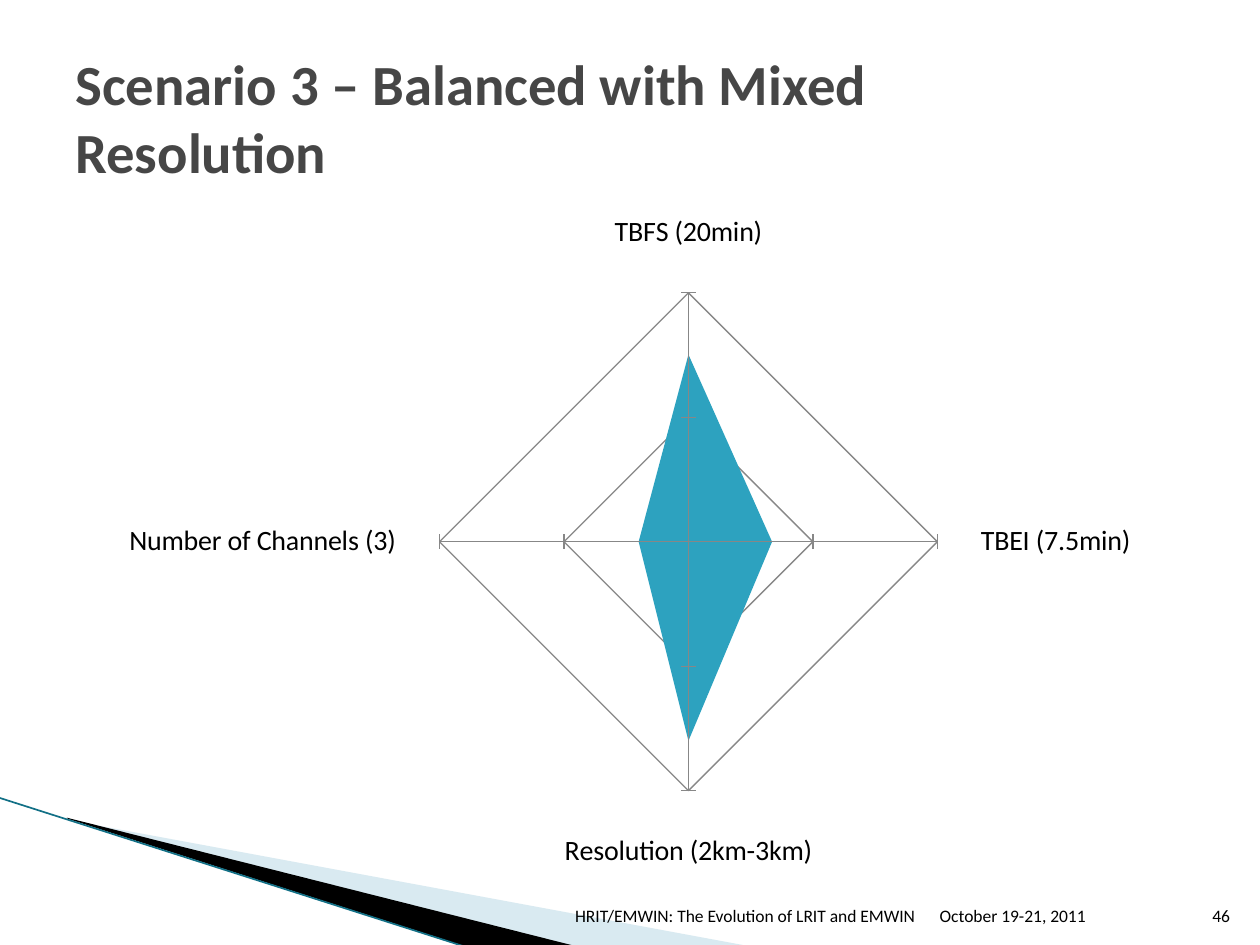
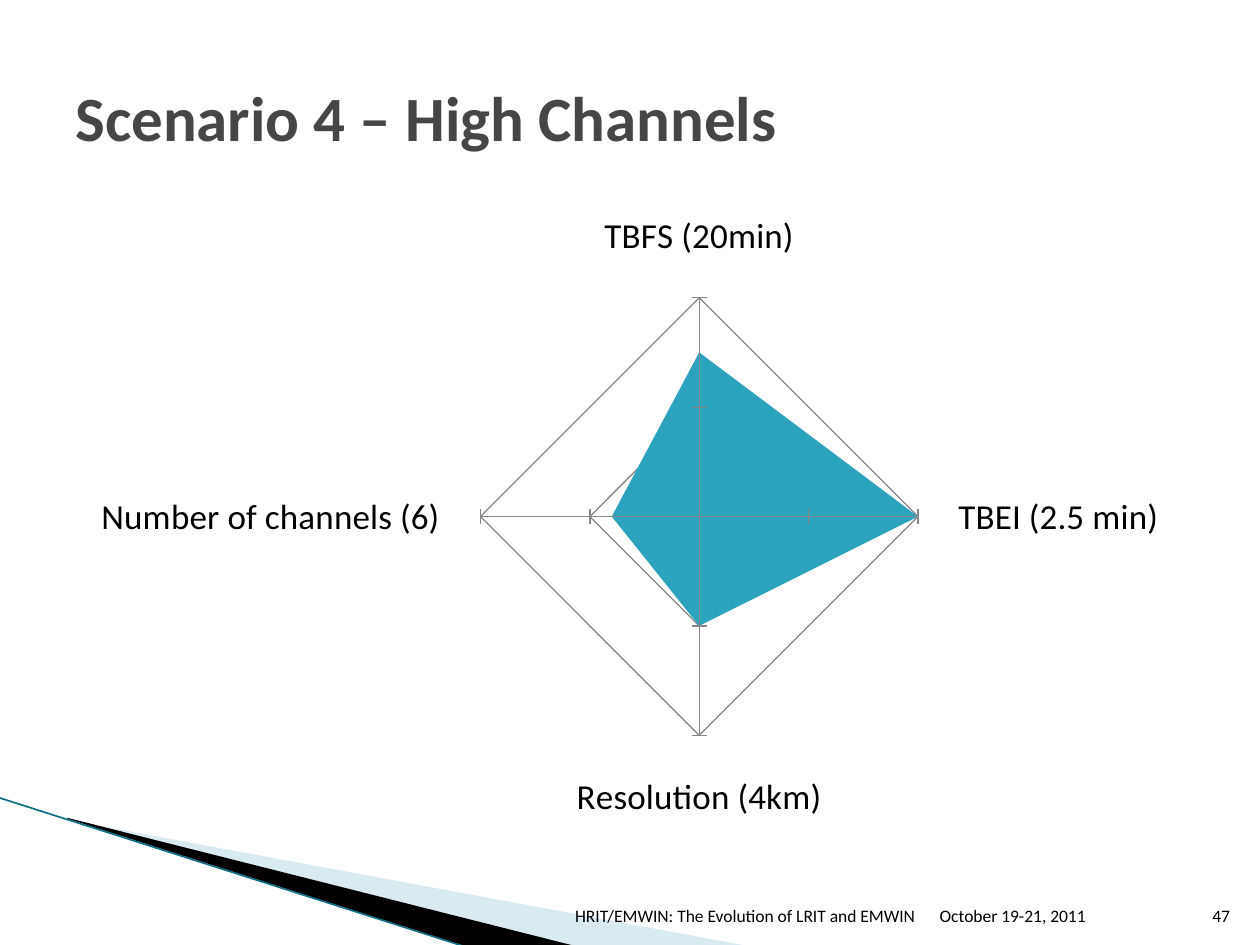
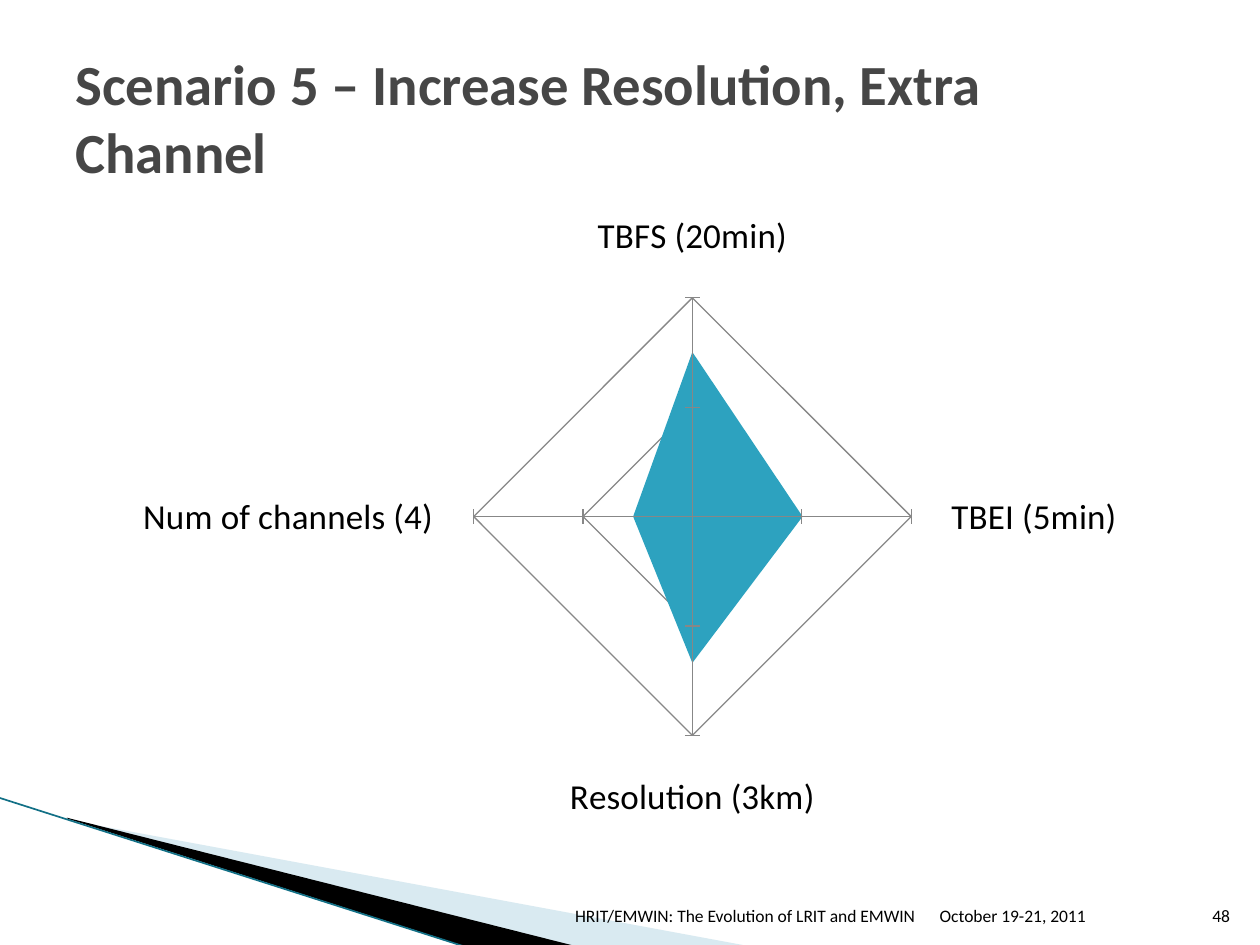
"""Build three radar slides that weigh the broadcast scenarios."""
from dataclasses import dataclass

from lxml.etree import SubElement
from pptx import Presentation
from pptx.chart.data import CategoryChartData
from pptx.dml.color import RGBColor
from pptx.enum.chart import XL_CHART_TYPE, XL_TICK_LABEL_POSITION, XL_TICK_MARK
from pptx.enum.shapes import MSO_CONNECTOR
from pptx.enum.text import MSO_ANCHOR, PP_ALIGN
from pptx.oxml.ns import qn
from pptx.slide import Slide
from pptx.util import Pt

FONT = "Calibri"
BLACK = RGBColor(0x00, 0x00, 0x00)
GRAY = RGBColor(0x46, 0x46, 0x46)
GRID = RGBColor(0x87, 0x87, 0x87)
TEAL = RGBColor(0x2D, 0xA2, 0xBF)
DEEP = RGBColor(0x12, 0x70, 0x86)
PALE = RGBColor(0xA0, 0xCB, 0xDC)


@dataclass(frozen=True)
class Label:
    """Place and style of one line of text."""

    left: float
    top: float
    width: float
    height: float
    size: float = 10
    color: RGBColor = BLACK
    bold: bool = False
    align: PP_ALIGN = PP_ALIGN.LEFT
    anchor: MSO_ANCHOR = MSO_ANCHOR.BOTTOM


@dataclass(frozen=True)
class Band:
    """Filled outline in the lower left corner."""

    points: tuple[tuple[float, float], ...]
    color: RGBColor
    alpha: int = 100


@dataclass(frozen=True)
class Scene:
    """Title and radar chart of one slide."""

    title: str
    size: float
    names: tuple[str, ...]
    values: tuple[int, ...]
    top: int
    height: int = 360
    font: int = 20
    axis: RGBColor = GRID


BANDS = (
    Band(((39.6, 468.7), (428.4, 540.7), (328.3, 540.7), (39.6, 468)), PALE, 40),
    Band(((38.2, 467.3), (329, 540.7), (267.8, 541.4), (38.9, 468)), BLACK),
)
DATE = Label(529.9, 504, 151.2, 28.8)
EVENT = Label(288, 504, 241.9, 28.8, align=PP_ALIGN.RIGHT)
PAGE = Label(681.1, 504, 28.8, 28.8, align=PP_ALIGN.RIGHT)
FIRST = 46

SCENES = (
    Scene(
        "Scenario 3 – Balanced with Mixed Resolution", 32.4,
        ("TBFS (20min)", "TBEI (7.5min)", "Resolution (2km-3km)", "Number of Channels (3)"),
        (94, 42, 100, 25), 125, height=388.8, font=16,
    ),
    Scene(
        "Scenario 4 – High Channels", 36,
        ("TBFS (20min)", "TBEI (2.5 min)", "Resolution (4km)", "Number of channels (6)"),
        (75, 100, 50, 40), 100, axis=BLACK,
    ),
    Scene(
        "Scenario 5 – Increase Resolution, Extra Channel", 32.4,
        ("TBFS (20min)", "TBEI (5min)", "Resolution (3km)", "Num of channels (4)"),
        (100, 67, 89, 36), 133,
    ),
)


def write(slide: Slide, text: str, spec: Label) -> None:
    """Add a text box in the given style."""
    box = slide.shapes.add_textbox(
        Pt(spec.left), Pt(spec.top), Pt(spec.width), Pt(spec.height)
    )
    frame = box.text_frame
    frame.word_wrap = True
    frame.vertical_anchor = spec.anchor
    para = frame.paragraphs[0]
    para.text = text
    para.alignment = spec.align
    font = para.font
    font.name, font.size, font.bold = FONT, Pt(spec.size), spec.bold
    font.color.rgb = spec.color


def draw_band(slide: Slide, band: Band) -> None:
    """Draw one filled outline."""
    start, *rest = [(Pt(x), Pt(y)) for x, y in band.points]
    pen = slide.shapes.build_freeform(*start)
    pen.add_line_segments(rest)
    shape = pen.convert_to_shape()
    shape.shadow.inherit = False
    shape.line.fill.background()
    shape.fill.solid()
    shape.fill.fore_color.rgb = band.color
    if band.alpha < 100:
        tint = next(shape.element.iter(qn("a:srgbClr")))
        SubElement(tint, qn("a:alpha")).set("val", str(band.alpha * 1000))


def draw_frame(slide: Slide, page: int) -> None:
    """Draw the bands, edge line and footer shared by all slides."""
    for band in BANDS:
        draw_band(slide, band)
    edge = slide.shapes.add_connector(
        MSO_CONNECTOR.STRAIGHT, Pt(-0.7), Pt(455.8), Pt(267.1), Pt(541.4)
    )
    edge.line.color.rgb = DEEP
    edge.line.width = Pt(0.95)
    SubElement(edge.element.spPr, qn("a:effectLst"))
    write(slide, "October 19-21, 2011", DATE)
    write(slide, "HRIT/EMWIN: The Evolution of LRIT and EMWIN", EVENT)
    write(slide, str(page), PAGE)


def draw_radar(slide: Slide, scene: Scene) -> None:
    """Draw the filled radar chart with two rings."""
    data = CategoryChartData()
    data.categories = scene.names
    data.add_series("Series 1", scene.values)
    chart = slide.shapes.add_chart(
        XL_CHART_TYPE.RADAR_FILLED, Pt(36), Pt(115.2), Pt(648), Pt(scene.height), data
    ).chart
    chart.has_legend = chart.has_title = False
    chart.font.name, chart.font.size = FONT, Pt(10)
    chart.font.color.rgb = BLACK
    plot = chart.plots[0]
    plot.vary_by_categories = False
    fill = plot.series[0].format.fill
    fill.solid()
    fill.fore_color.rgb = TEAL

    spokes, scale = chart.category_axis, chart.value_axis
    for axis, color in ((spokes, scene.axis), (scale, GRID)):
        axis.major_tick_mark = XL_TICK_MARK.CROSS
        axis.has_major_gridlines = True
        for line in (axis.format.line, axis.major_gridlines.format.line):
            line.width = Pt(0.75)
            line.color.rgb = GRID
        axis.format.line.color.rgb = color
    spokes.tick_labels.font.size = Pt(scene.font)
    scale.tick_label_position = XL_TICK_LABEL_POSITION.NONE
    scale.minimum_scale, scale.maximum_scale = 0, scene.top
    scale.major_unit = scene.top / 2


def main() -> None:
    """Build and save the slides."""
    deck = Presentation()
    deck.slide_width, deck.slide_height = Pt(720), Pt(540)
    for page, scene in enumerate(SCENES, FIRST):
        slide = deck.slides.add_slide(deck.slide_layouts[6])
        draw_frame(slide, page)
        head = Label(36, 21.6, 594, 90, scene.size, GRAY, True, anchor=MSO_ANCHOR.MIDDLE)
        write(slide, scene.title, head)
        draw_radar(slide, scene)
    deck.save("out.pptx")


if __name__ == "__main__":
    main()
